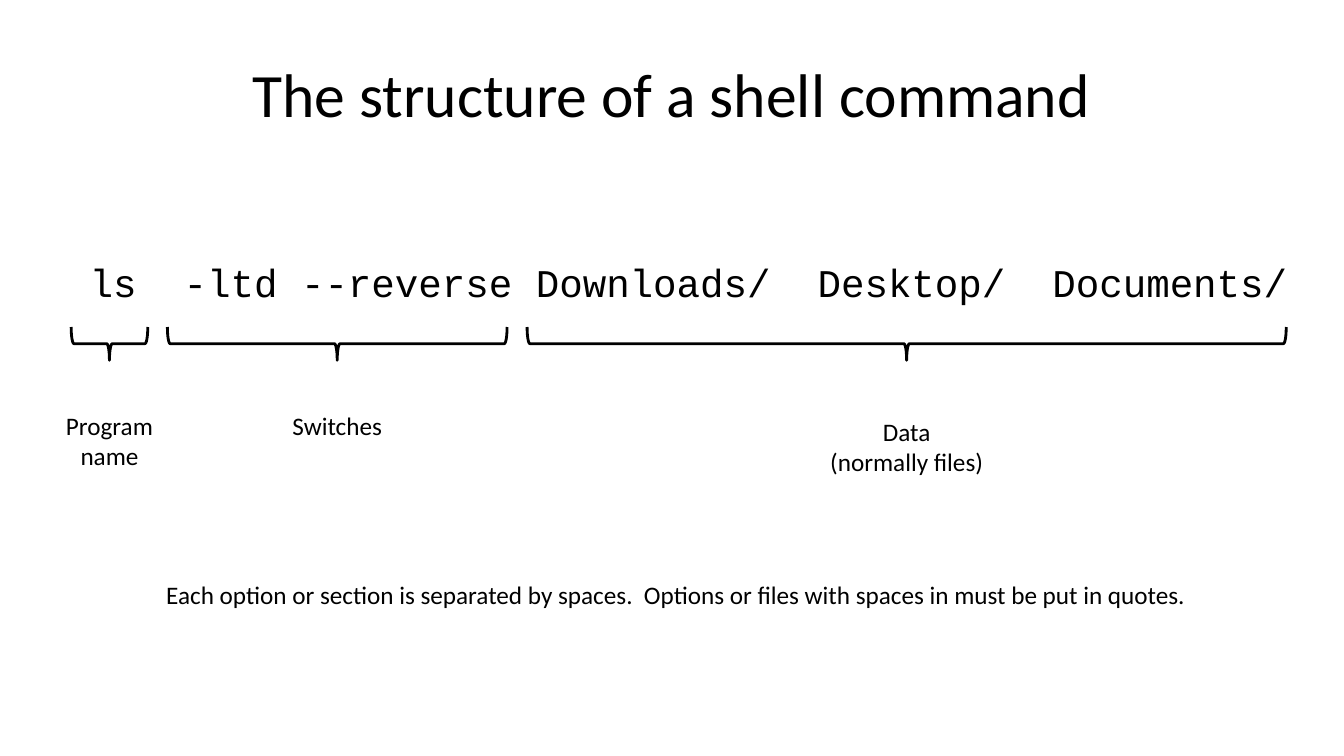
from dataclasses import dataclass

from pptx import Presentation
from pptx.dml.color import RGBColor
from pptx.enum.shapes import MSO_SHAPE
from pptx.enum.text import MSO_ANCHOR, PP_ALIGN
from pptx.shapes.shapetree import GroupShapes
from pptx.text.text import TextFrame
from pptx.util import Cm, Pt


@dataclass(frozen=True)
class Theme:
    ink: RGBColor = RGBColor(0, 0, 0)
    body_font: str = "Calibri"
    code_font: str = "Courier New"
    title_size: int = 44
    code_size: int = 28
    body_size: int = 18
    line_width: int = 2


@dataclass(frozen=True)
class Box:
    """Position and size in centimetres."""
    left: float
    top: float
    width: float
    height: float

    def lengths(self) -> tuple[Cm, Cm, Cm, Cm]:
        return Cm(self.left), Cm(self.top), Cm(self.width), Cm(self.height)


@dataclass(frozen=True)
class CommandPart:
    """A bracketed part of the command, with its label centred below."""
    label: str
    center: float
    span: float
    label_top: float
    label_width: float
    label_height: float


THEME = Theme()
BRACE_MIDDLE = 8.66
BRACE_DEPTH = 0.84
COMMAND_PARTS = [
    CommandPart("Program\nname", 2.76, 1.93, 10.21, 4.55, 3.0),
    CommandPart("Switches", 8.5, 8.56, 10.21, 4.67, 1.7),
    CommandPart("Data\n(normally files)", 22.85, 19.13, 10.36, 7.37, 3.0),
]


def write_text(frame: TextFrame, text: str, size: int, font: str,
               alignment: PP_ALIGN) -> None:
    frame.text = text
    frame.word_wrap = True
    for paragraph in frame.paragraphs:
        paragraph.alignment = alignment
        paragraph.font.size = Pt(size)
        paragraph.font.name = font
        paragraph.font.color.rgb = THEME.ink


def add_text(shapes: GroupShapes, box: Box, text: str, size: int = THEME.body_size,
             font: str = THEME.body_font, alignment: PP_ALIGN = PP_ALIGN.LEFT) -> None:
    shape = shapes.add_textbox(*box.lengths())
    write_text(shape.text_frame, text, size, font, alignment)


def add_brace(shapes: GroupShapes, part: CommandPart) -> None:
    # The upright brace is turned about its centre to open upwards
    box = Box(part.center - BRACE_DEPTH / 2, BRACE_MIDDLE - part.span / 2,
              BRACE_DEPTH, part.span)
    shape = shapes.add_shape(MSO_SHAPE.LEFT_BRACE, *box.lengths())
    shape.rotation = 270
    shape.shadow.inherit = False
    shape.fill.background()
    shape.line.color.rgb = THEME.ink
    shape.line.width = Pt(THEME.line_width)


def add_label(shapes: GroupShapes, part: CommandPart) -> None:
    box = Box(part.center - part.label_width / 2, part.label_top,
              part.label_width, part.label_height)
    add_text(shapes, box, part.label, alignment=PP_ALIGN.CENTER)


def main() -> None:
    presentation = Presentation()
    presentation.slide_width = Cm(33.87)
    presentation.slide_height = Cm(19.05)
    slide = presentation.slides.add_slide(presentation.slide_layouts[5])

    # Title
    title = slide.shapes.title
    title.left, title.top, title.width, title.height = Box(1.69, 0.76, 30.48, 3.18).lengths()
    title.text_frame.vertical_anchor = MSO_ANCHOR.MIDDLE
    write_text(title.text_frame, "The structure of a shell command",
               THEME.title_size, THEME.body_font, PP_ALIGN.CENTER)

    # Command with its braces and labels
    diagram = slide.shapes.add_group_shape().shapes
    add_text(diagram, Box(1.42, 6.38, 31.55, 1.45),
             " ls  -ltd --reverse Downloads/  Desktop/  Documents/",
             THEME.code_size, THEME.code_font)
    for part in COMMAND_PARTS:
        add_brace(diagram, part)
    for part in COMMAND_PARTS:
        add_label(diagram, part)

    # Remark on spaces
    add_text(slide.shapes, Box(3.94, 14.48, 26.52, 1.02),
             "Each option or section is separated by spaces.  "
             "Options or files with spaces in must be put in quotes.")

    presentation.save("out.pptx")


if __name__ == "__main__":
    main()
